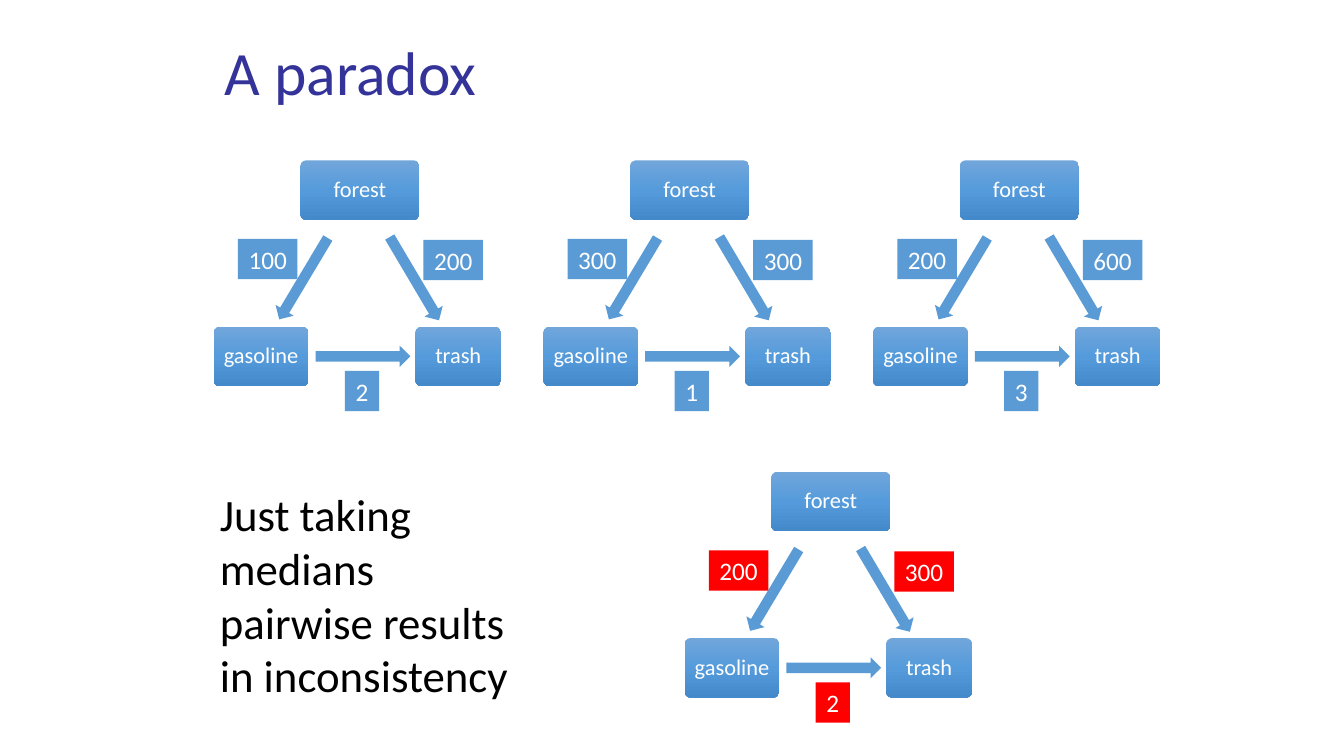
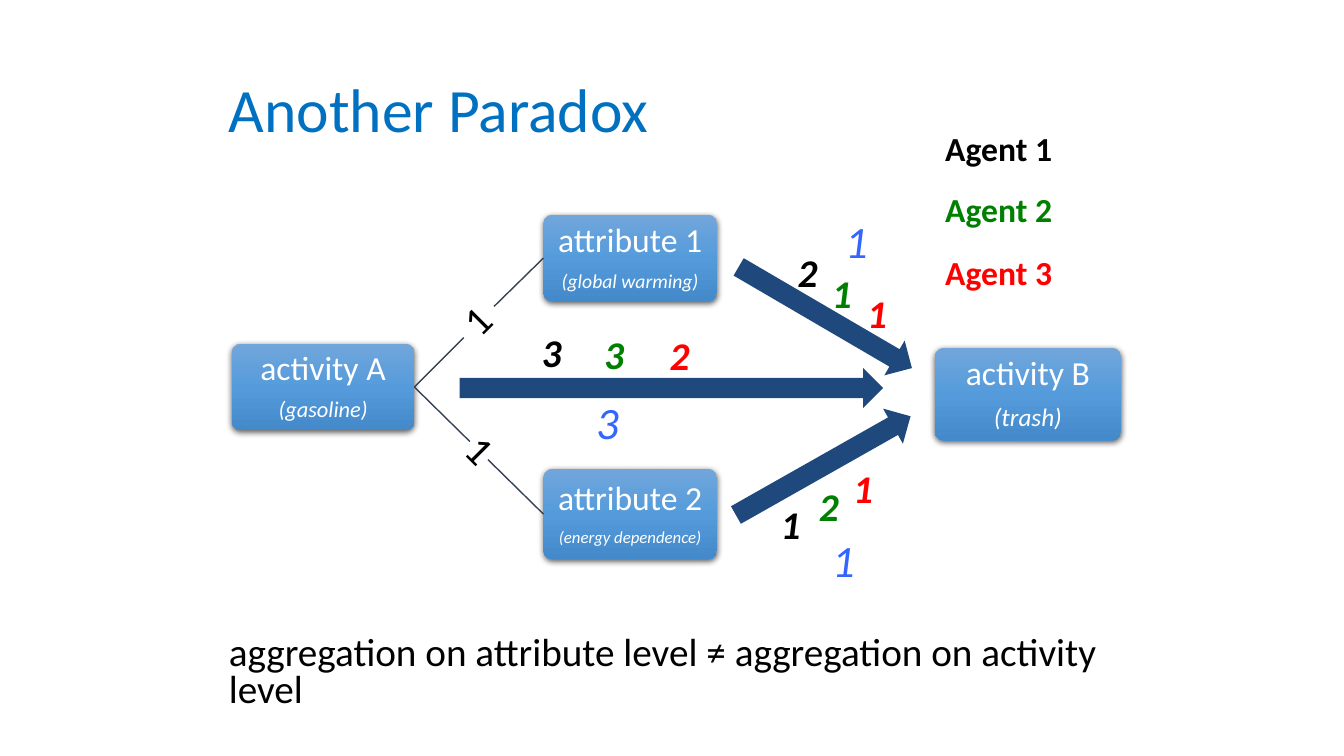
from copy import deepcopy

from lxml import etree
from pptx import Presentation
from pptx.dml.color import RGBColor
from pptx.enum.shapes import MSO_CONNECTOR as Link, MSO_SHAPE as Kind
from pptx.enum.text import MSO_ANCHOR as Anchor, PP_ALIGN as Align
from pptx.oxml import parse_xml
from pptx.oxml.ns import nsdecls, qn
from pptx.util import Emu, Pt

PX = 9144  # 100 px to the inch
FONT = "Calibri"

BLACK = RGBColor(0x00, 0x00, 0x00)
WHITE = RGBColor(0xFF, 0xFF, 0xFF)
RED = RGBColor(0xFF, 0x00, 0x00)
GREEN = RGBColor(0x00, 0x80, 0x00)
BLUE = RGBColor(0x33, 0x66, 0xFF)
SKY = RGBColor(0x5B, 0x9B, 0xD5)
NAVY = RGBColor(0x1F, 0x49, 0x7D)
SLATE = RGBColor(0x36, 0x43, 0x55)
INDIGO = RGBColor(0x33, 0x33, 0x99)
AZURE = RGBColor(0x00, 0x70, 0xC0)
SHADES = (
    (0, RGBColor(0x71, 0xA6, 0xDB)),
    (0.5, RGBColor(0x55, 0x9B, 0xDB)),
    (1, RGBColor(0x44, 0x8A, 0xCA)),
)

MARK = {"size": 28, "bold": True, "italic": True}
TOTAL = {"size": 32, "italic": True, "color": BLUE}
SHADOW = (
    f'<a:outerShdw {nsdecls("a")} blurRad="57150" dist="19050" dir="5400000" '
    'algn="ctr" rotWithShape="0"><a:srgbClr val="000000">'
    '<a:alpha val="63000"/></a:srgbClr></a:outerShdw>'
)


def px(*nums):
    return [Emu(round(num * PX)) for num in nums]


def style(font, form):
    for key, val in {"name": FONT, "color": BLACK, **form}.items():
        if key == "color":
            font.color.rgb = val
        else:
            setattr(font, key, Pt(val) if key == "size" else val)


def write(shape, rows, align=Align.CENTER, anchor=Anchor.MIDDLE, lead=1.0, gap=0):
    """Fill a shape with rows of (text, format), one paragraph each."""
    frame = shape.text_frame
    sides = ("left", "top", "right", "bottom")
    form = {"word_wrap": True, "vertical_anchor": anchor}
    form.update({f"margin_{side}": 0 for side in sides})
    for key, val in form.items():
        setattr(frame, key, val)
    for num, (words, face) in enumerate(rows):
        para = frame.add_paragraph() if num else frame.paragraphs[0]
        para.text = words
        para.alignment, para.line_spacing = align, lead
        para.space_before = Pt(gap if num else 0)
        style(para.font, face)


def label(slide, box, words, form, turn=0, **opts):
    shape = slide.shapes.add_textbox(*px(*box))
    shape.rotation = turn
    write(shape, [(words, form)], **opts)


def title(slide, box, words, color):
    label(slide, box, words, {"size": 44, "color": color}, align=Align.LEFT, lead=0.9)


def solid(slide, kind, box, color, turn=0):
    shape = slide.shapes.add_shape(kind, *px(*box))
    shape.shadow.inherit = False
    shape.fill.solid()
    shape.fill.fore_color.rgb = color
    shape.line.fill.background()
    shape.rotation = turn
    return shape


def arrow(slide, box, color, turn=0):
    solid(slide, Kind.RIGHT_ARROW, box, color, turn)


def card(slide, box, rows, raised=False):
    """Draw a shaded rounded box holding rows of (text, format)."""
    shape = solid(slide, Kind.ROUNDED_RECTANGLE, box, SKY)
    shape.adjustments[0] = 0.1
    shape.fill.gradient()
    shape.fill.gradient_angle = 270
    first = shape._element.spPr.find(".//" + qn("a:gs"))
    first.addnext(deepcopy(first))
    for stop, (place, color) in zip(shape.fill.gradient_stops, SHADES):
        stop.position, stop.color.rgb = place, color
    if raised:
        shape._element.spPr.find(qn("a:effectLst")).append(parse_xml(SHADOW))
    write(shape, [(words, {"color": WHITE, **form}) for words, form in rows],
          lead=0.9, gap=8)
    return shape


def pair(slide, box, name, note, size):
    rows = [(name, {"size": 24}), (note, {"size": size, "italic": True})]
    return card(slide, box, rows, raised=True)


def line(slide, start, end):
    link = slide.shapes.add_connector(Link.STRAIGHT, *px(*start, *end))
    link.line.color.rgb = SLATE
    link.line.width = Pt(1)
    etree.SubElement(link._element.spPr, qn("a:effectLst"))
    return link


def ratios(slide, left, top, values, color):
    """Draw one triangle of activities with its three ratios."""
    def at(x, y, *rest):
        return (left + x, top + y, *rest)

    for name, x, y, wide in (("forest", 86, 0, 118), ("trash", 200, 165, 85),
                             ("gasoline", 0, 165, 94)):
        card(slide, at(x, y, wide, 59), [(name, {"size": 16})])
    for x, y, wide, turn in ((151, 107, 96, 59.4), (101, 184, 94, 0),
                             (42, 107, 94, 120.9)):
        arrow(slide, at(x, y, wide, 21), SKY, turn)
    spots = ((24, 78, 59), (208, 79, 59), (130, 209, 34))
    for value, (x, y, wide) in zip(values, spots):
        chip = solid(slide, Kind.RECTANGLE, at(x, y, wide, 40), color)
        write(chip, [(str(value), {"size": 18, "color": WHITE})])


def medians(slide):
    title(slide, (223, 25, 944, 99), "A paradox", INDIGO)
    for num, values in enumerate(((100, 200, 2), (300, 300, 1), (200, 600, 3))):
        ratios(slide, 212 + 327 * num, 159, values, SKY)
    label(slide, (218, 483, 315, 158),
          "Just taking medians pairwise results in inconsistency",
          {"size": 32}, align=Align.LEFT, anchor=Anchor.TOP)
    ratios(slide, 679, 468, (200, 300, 2), RED)


def levels(slide):
    title(slide, (227, 58, 488, 108), "Another Paradox", AZURE)
    label(slide, (227, 631, 880, 83),
          "aggregation on attribute level ≠ aggregation on activity level",
          {"size": 28}, align=Align.LEFT, anchor=Anchor.TOP, lead=0.8)

    source = pair(slide, (230, 341, 181, 86), "activity A", "(gasoline)", 16)
    warming = pair(slide, (539, 213, 172, 86), "attribute 1", "(global warming)", 14)
    energy = pair(slide, (539, 465, 172, 90), "attribute 2", "(energy dependence)", 12)
    pair(slide, (927, 345, 185, 92), "activity B", "(trash)", 18)

    for goal, near, far, spot, turn in (
        (warming, (460, 335), (490, 304), (453, 297, 43, 45), -45),
        (energy, (466, 438), (484, 456), (462, 425, 26, 45), 45),
    ):
        line(slide, near, near).begin_connect(source, 3)
        line(slide, far, far).end_connect(goal, 1)
        label(slide, spot, "1", {"size": 29}, turn, lead=0.9)

    for box, turn in (((717, 442, 199, 40), -29.5), ((719, 295, 199, 40), 30.3),
                      ((456, 365, 420, 40), 0)):
        arrow(slide, box, NAVY, turn)

    agents = (
        ("Agent 1", BLACK, 122, (("2", 781, 241), ("1", 764, 491), ("3", 527, 321))),
        ("Agent 2", GREEN, 182, (("1", 815, 262), ("2", 802, 473), ("3", 589, 323))),
        ("Agent 3", RED, 245, (("1", 850, 282), ("1", 836, 455), ("2", 654, 324))),
    )
    for name, color, top, marks in agents:
        label(slide, (927, top, 127, 50), name,
              {"size": 24, "bold": True, "color": color})
        for value, x, y in marks:
            label(slide, (x, y, 40, 57), value, {**MARK, "color": color})
    for value, x, y in (("1", 828, 207), ("1", 815, 523), ("3", 581, 386)):
        label(slide, (x, y, 43, 64), value, TOTAL)


def main():
    deck = Presentation()
    deck.slide_width, deck.slide_height = px(1333, 750)
    for draw in (medians, levels):
        draw(deck.slides.add_slide(deck.slide_layouts[6]))
    deck.save("out.pptx")


if __name__ == "__main__":
    main()
